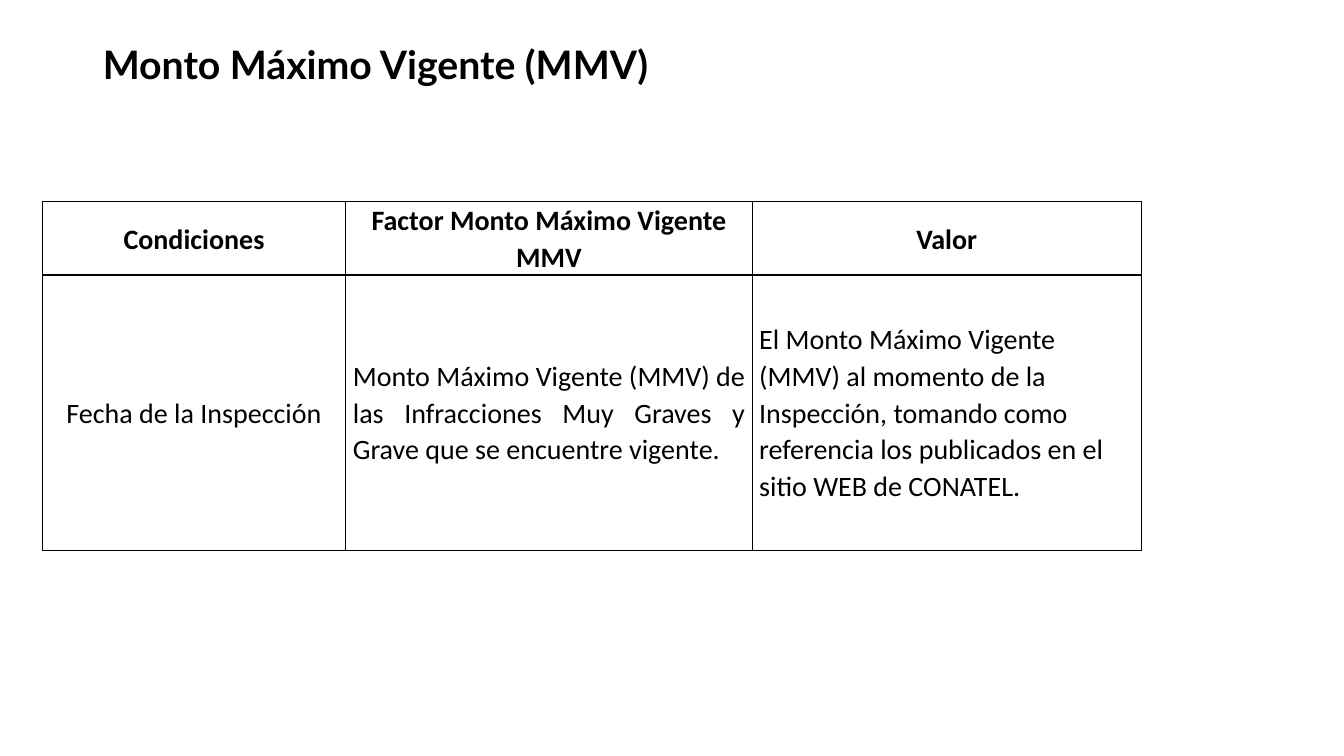
import pptx
import pptx.util
import pptx.dml.color
import pptx.enum.text
from dataclasses import dataclass
from lxml import etree
from pptx.util import Inches


@dataclass(frozen=True)
class Theme:
    ink: str = "000000"
    title_font: str = "Lato"
    body_font: str = "Calibri"
    title_size: int = 28
    body_size: int = 20
    border_width: int = 1


theme = Theme()
ALIGN = pptx.enum.text.PP_ALIGN
ANCHOR = pptx.enum.text.MSO_ANCHOR


def add_run(paragraph, text, font_name, size, bold):
    run = paragraph.add_run()
    run.text = text
    run.font.name = font_name
    run.font.size = pptx.util.Pt(size)
    run.font.bold = bold
    run.font.color.rgb = pptx.dml.color.RGBColor.from_string(theme.ink)


def add_borders(cell):
    properties = cell._tc.get_or_add_tcPr()
    for position, side in enumerate(("lnL", "lnR", "lnT", "lnB")):
        line = etree.Element(pptx.oxml.ns.qn(f"a:{side}"),
                             w=str(pptx.util.Pt(theme.border_width)))
        fill = etree.SubElement(line, pptx.oxml.ns.qn("a:solidFill"))
        etree.SubElement(fill, pptx.oxml.ns.qn("a:srgbClr"), val=theme.ink)
        properties.insert(position, line)


# Slide
presentation = pptx.Presentation()
presentation.slide_width = Inches(13.33)
presentation.slide_height = Inches(7.5)
slide = presentation.slides.add_slide(presentation.slide_layouts[5])

# Title
title = slide.shapes.title
title.left, title.top = Inches(0.92), Inches(0.4)
title.width, title.height = Inches(11.5), Inches(1.45)
title.text_frame.vertical_anchor = ANCHOR.TOP
title.text_frame.word_wrap = True
paragraph = title.text_frame.paragraphs[0]
paragraph.alignment = ALIGN.LEFT
paragraph.line_spacing = 0.9
add_run(paragraph, "Monto Máximo Vigente (MMV)", theme.title_font, theme.title_size, True)

# Table content
rows = [
    ["Condiciones", "Factor Monto Máximo Vigente MMV", "Valor"],
    ["Fecha de la Inspección",
     "Monto Máximo Vigente (MMV) de las Infracciones Muy Graves y Grave "
     "que se encuentre vigente.",
     "El Monto Máximo Vigente (MMV) al momento de la Inspección, tomando como "
     "referencia los publicados en el sitio WEB de CONATEL."],
]
column_widths = [3.01, 4.03, 3.86]
row_heights = [0.59, 2.73]
body_alignments = [ALIGN.CENTER, ALIGN.JUSTIFY, ALIGN.LEFT]

# Table
table = slide.shapes.add_table(len(rows), len(column_widths), Inches(0.42), Inches(2),
                               Inches(sum(column_widths)), Inches(sum(row_heights))).table
table.horz_banding = False
for column, width in zip(table.columns, column_widths):
    column.width = Inches(width)
for row_index, texts in enumerate(rows):
    table.rows[row_index].height = Inches(row_heights[row_index])
    is_header = row_index == 0
    for column_index, text in enumerate(texts):
        cell = table.cell(row_index, column_index)
        cell.fill.background()
        cell.vertical_anchor = ANCHOR.MIDDLE
        cell.margin_left = cell.margin_right = Inches(0.07)
        cell.margin_top = cell.margin_bottom = 0
        add_borders(cell)
        paragraph = cell.text_frame.paragraphs[0]
        paragraph.alignment = ALIGN.CENTER if is_header else body_alignments[column_index]
        paragraph.line_spacing = 1.07
        add_run(paragraph, text, theme.body_font, theme.body_size, is_header)

presentation.save("out.pptx")
